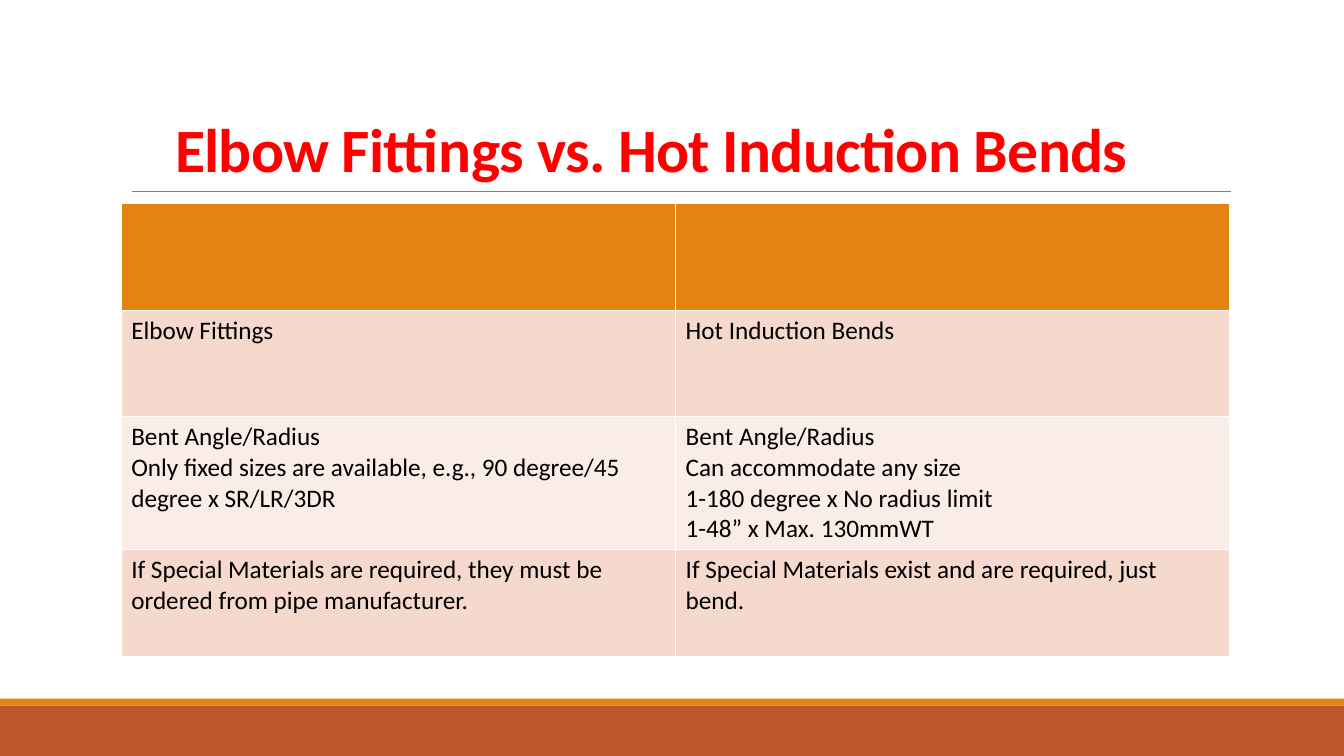
from pptx import Presentation
from pptx.dml.color import RGBColor
from pptx.enum.shapes import MSO_CONNECTOR as Connector, MSO_SHAPE as Shape
from pptx.enum.text import MSO_ANCHOR as Anchor, MSO_AUTO_SIZE as AutoSize, PP_ALIGN as Align
from pptx.oxml.ns import qn
from pptx.util import Pt

FONT = "Calibri"
ORANGE, RUST = "E48312", "BD582C"
BANDS = ["F5D9CC", "FAEDE7"]
COMPARISON = [
    ([], []),
    (["Elbow Fittings"], ["Hot Induction Bends"]),
    (
        ["Bent Angle/Radius",
         "Only fixed sizes are available, e.g., 90 degree/45 degree x SR/LR/3DR"],
        ["Bent Angle/Radius", "Can accommodate any size",
         "1-180 degree x No radius limit", "1-48” x Max. 130mmWT"],
    ),
    (
        ["If Special Materials are required, they must be ordered from pipe manufacturer."],
        ["If Special Materials exist and are required, just bend."],
    ),
]


def paint(colour_format, colour):
    colour_format.rgb = RGBColor.from_string(colour)


def fill_with(part, colour):
    part.fill.solid()
    paint(part.fill.fore_color, colour)


def add_text(paragraph, wording, size, colour, bold=False):
    run = paragraph.add_run()
    run.text = wording
    run.font.name, run.font.size, run.font.bold = FONT, Pt(size), bold
    paint(run.font.color, colour)
    return run


def add_footer_bands(slide, left, top, width, height):
    stripe = 5
    for offset, depth, colour in ((0, stripe, ORANGE), (stripe, height - stripe, RUST)):
        band = slide.shapes.add_shape(
            Shape.RECTANGLE, Pt(left), Pt(top + offset), Pt(width), Pt(depth))
        band.shadow.inherit = False
        band.line.fill.background()
        fill_with(band, colour)


def add_heading(slide, left, top, width, height):
    rule_y = top + height
    rule = slide.shapes.add_connector(
        Connector.STRAIGHT, Pt(left + 8), Pt(rule_y), Pt(left + width + 0.7), Pt(rule_y))
    rule.line.width = Pt(0.5)
    paint(rule.line.color, "808080")
    properties = rule._element.spPr
    properties.append(properties.makeelement(qn("a:effectLst"), {}))

    title = slide.shapes.title
    title.left, title.top, title.width, title.height = map(Pt, (left, top, width, height))
    frame = title.text_frame
    frame.auto_size = AutoSize.NONE
    frame.word_wrap = True
    frame.vertical_anchor = Anchor.BOTTOM
    frame.margin_left, frame.margin_bottom = Pt(38.4), Pt(4.6)
    heading = frame.paragraphs[0]
    heading.alignment = Align.LEFT
    heading.line_spacing = 0.85
    run = add_text(heading, "Elbow Fittings vs. Hot Induction Bends", 44, "FF0000", bold=True)
    run.font._element.set("spc", "-50")


def add_comparison(slide, left, top, width, height):
    table = slide.shapes.add_table(
        len(COMPARISON), 2, Pt(left), Pt(top), Pt(width), Pt(height)).table
    for row, entries in enumerate(COMPARISON):
        for column, lines in enumerate(entries):
            cell = table.cell(row, column)
            fill_with(cell, BANDS[(row - 1) % 2] if row else ORANGE)
            frame = cell.text_frame
            for number, wording in enumerate(lines):
                paragraph = frame.add_paragraph() if number else frame.paragraphs[0]
                add_text(paragraph, wording, 18, "000000")


def main():
    deck = Presentation()
    deck.slide_width, deck.slide_height = Pt(960), Pt(540)
    slide = deck.slides.add_slide(deck.slide_layouts[5])
    add_footer_bands(slide, 0, 499, 960, 41)
    add_heading(slide, 86.6, 22.6, 792, 114.2)
    add_comparison(slide, 86.6, 145.6, 792, 304)
    deck.save("out.pptx")


if __name__ == "__main__":
    main()
